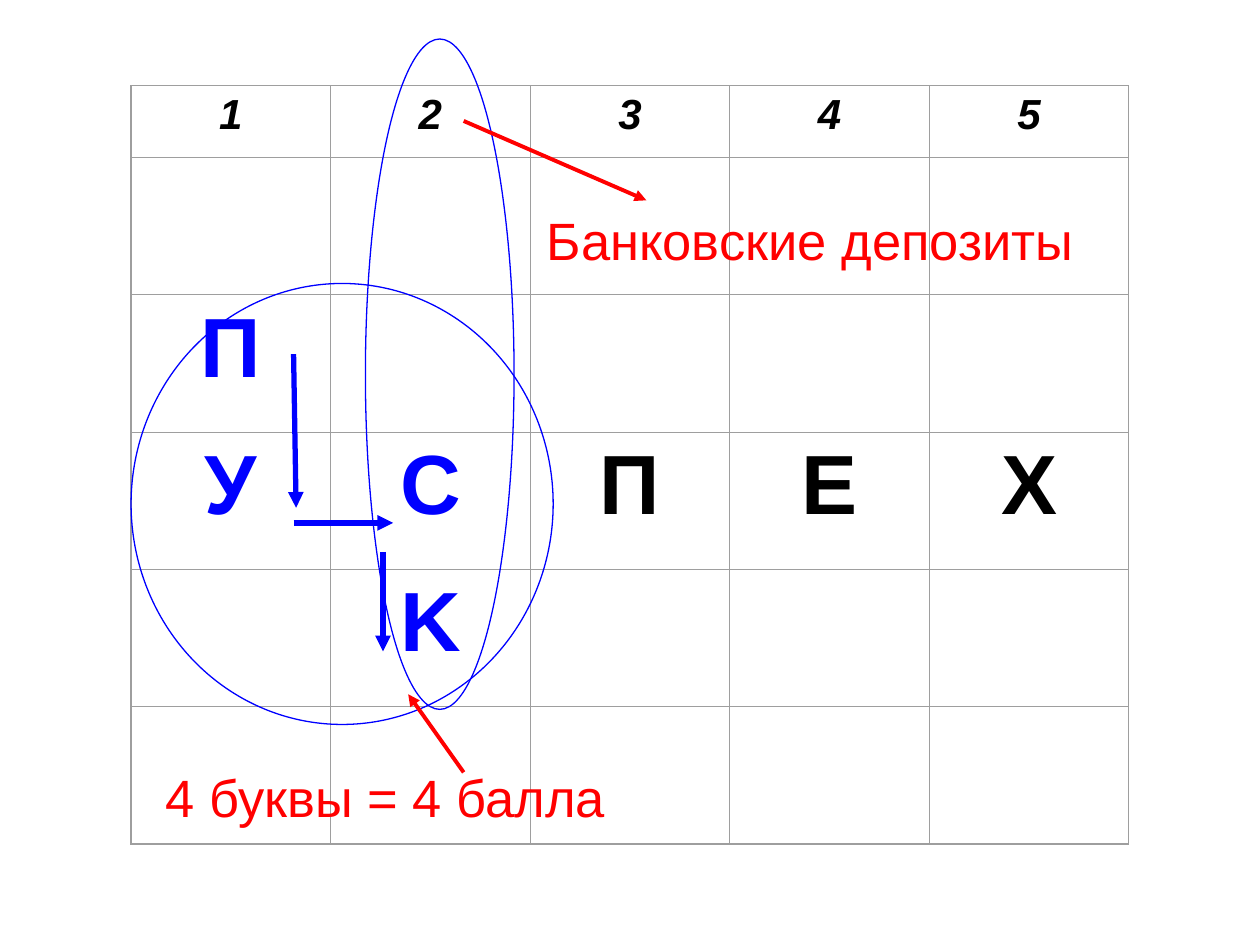
"""Word-game slide: a letter grid with the played word circled and scored."""
from lxml.etree import SubElement
from pptx import Presentation
from pptx.dml.color import RGBColor
from pptx.enum.shapes import MSO_CONNECTOR, MSO_SHAPE
from pptx.enum.text import PP_ALIGN
from pptx.oxml import parse_xml
from pptx.oxml.ns import nsdecls, qn
from pptx.util import Inches, Pt

COLORS = {"black": "000000", "blue": "0000FF", "red": "FF0000", "grid": "9E9E9E"}


def add_text(frame, text, size, color, align):
    frame.margin_left = frame.margin_right = Inches(0.1)
    frame.margin_top = frame.margin_bottom = Inches(0.1)
    paragraph = frame.paragraphs[0]
    paragraph.alignment = align
    run = paragraph.add_run()
    run.text = text
    run.font.name = "Arial"
    run.font.size = Pt(size)
    run.font.color.rgb = RGBColor.from_string(COLORS[color])
    return paragraph


def add_arrow(shapes, start, end, color, width):
    arrow = shapes.add_connector(MSO_CONNECTOR.STRAIGHT, *map(Inches, start + end))
    arrow.line.color.rgb = RGBColor.from_string(COLORS[color])
    arrow.line.width = Pt(width)
    SubElement(arrow.line._get_or_add_ln(), qn("a:tailEnd"), type="triangle")
    SubElement(arrow._element.spPr, qn("a:effectLst"))


prs = Presentation()
prs.slide_width, prs.slide_height = Inches(10), Inches(7.5)
shapes = prs.slides.add_slide(prs.slide_layouts[6]).shapes

letters = {
    (2, 0): ("П", "blue"),
    (3, 0): ("У", "blue"),
    (3, 1): ("С", "blue"),
    (3, 2): ("П", "black"),
    (3, 3): ("Е", "black"),
    (3, 4): ("Х", "black"),
    (4, 1): ("K", "blue"),
}
grid_frame = shapes.add_table(6, 5, Inches(1.04), Inches(0.68), Inches(7.92), Inches(6.02))
grid = grid_frame.table
grid.first_row = grid.horz_banding = False
for row_index, row in enumerate(grid.rows):
    row.height = Inches(1.09 if row_index else 0.57)
    for column_index, cell in enumerate(row.cells):
        properties = cell._tc.get_or_add_tcPr()
        for side in "LRTB":
            properties.append(parse_xml(
                f'<a:ln{side} {nsdecls("a")} w="{Pt(0.75)}"><a:solidFill>'
                f'<a:srgbClr val="{COLORS["grid"]}"/></a:solidFill></a:ln{side}>'))
        cell.fill.background()
        if row_index == 0:
            number = add_text(cell.text_frame, str(column_index + 1), 24, "black", PP_ALIGN.CENTER)
            number.runs[0].font.bold = number.runs[0].font.italic = True
        elif (row_index, column_index) in letters:
            letter, color = letters[row_index, column_index]
            played = add_text(cell.text_frame, letter, 48, color, PP_ALIGN.CENTER)
            played.runs[0].font.bold = True

for start, end in [
    ((2.33, 2.81), (2.35, 4.03)),
    ((2.33, 4.15), (3.12, 4.15)),
    ((3.04, 4.38), (3.04, 5.17)),
]:
    add_arrow(shapes, start, end, "blue", 3)

for bounds in [(1.04, 2.25, 3.35, 3.5), (2.9, 0.31, 1.18, 5.32)]:
    ring = shapes.add_shape(MSO_SHAPE.OVAL, *map(Inches, bounds))
    ring.shadow.inherit = False
    ring.fill.background()
    ring.line.color.rgb = RGBColor.from_string(COLORS["blue"])
    ring.line.width = Pt(0.75)

for text, bounds, align, spacing, start, end in [
    ("4 буквы = 4 балла", (1.12, 5.97, 3.88, 0.53), PP_ALIGN.CENTER, 1.0,
     (3.68, 6.13), (3.24, 5.51)),
    ("Банковские депозиты", (4.24, 1.48, 4.39, 0.65), PP_ALIGN.JUSTIFY, 1.15,
     (3.68, 0.96), (5.13, 1.59)),
]:
    caption = shapes.add_textbox(*map(Inches, bounds)).text_frame
    caption.word_wrap = True
    add_text(caption, text, 30, "red", align).line_spacing = spacing
    add_arrow(shapes, start, end, "red", 2.25)

prs.save("out.pptx")
